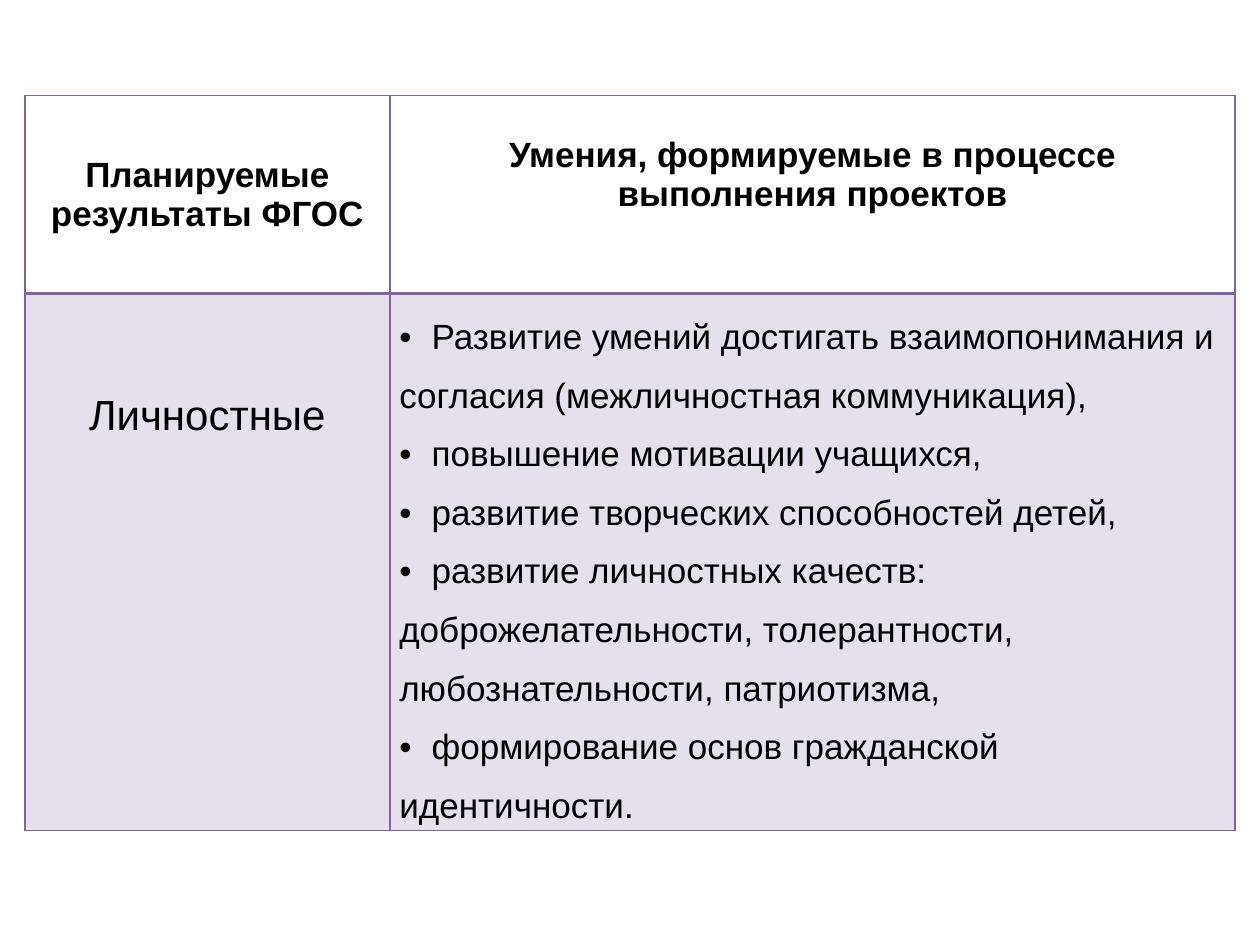
"""Build a slide with a table of planned results and project skills."""
from lxml import etree
from pptx import Presentation
from pptx.dml.color import RGBColor
from pptx.enum import text
from pptx.oxml import ns
from pptx.util import Cm, Pt

HUES = {"ink": "000000", "line": "8064A2", "tint": "E6E0EC"}
HEADS = ["Планируемые результаты ФГОС",
         "Умения, формируемые в процессе выполнения проектов"]
SKILLS = [
    "Развитие умений достигать взаимопонимания и согласия (межличностная коммуникация),",
    "повышение мотивации учащихся,",
    "развитие творческих способностей детей,",
    "развитие личностных качеств: доброжелательности, толерантности, любознательности, патриотизма,",
    "формирование основ гражданской идентичности.",
]
GAP = Cm(0.65)


def edge(cell, widths):
    props = cell._tc.get_or_add_tcPr()
    for spot, (side, width) in enumerate(zip("LRTB", widths)):
        line = etree.Element(ns.qn(f"a:ln{side}"), w=str(Pt(width)))
        fill = etree.SubElement(line, ns.qn("a:solidFill"))
        etree.SubElement(fill, ns.qn("a:srgbClr"), val=HUES["line"])
        props.insert(spot, line)


def style(par, size, bold=False):
    font = par.font
    for item in [font] + [run.font for run in par.runs]:
        item.name = "Arial"
        item.size = Pt(size)
        item.bold = bold
        item.color.rgb = RGBColor.from_string(HUES["ink"])


deck = Presentation()
deck.slide_width, deck.slide_height = Cm(25.4), Cm(19.05)
slide = deck.slides.add_slide(deck.slide_layouts[6])
grid = slide.shapes.add_table(2, 2, Cm(0.5), Cm(1.93), Cm(24.4), Cm(14.81)).table
grid.first_row = grid.horz_banding = False
for col, width in zip(grid.columns, (7.36, 17.04)):
    col.width = Cm(width)
for row, height in zip(grid.rows, (3.99, 10.82)):
    row.height = Cm(height)

for num, row in enumerate(grid.rows):
    for cell in row.cells:
        cell.margin_left = cell.margin_right = Cm(0.19)
        cell.margin_top = cell.margin_bottom = Cm(0.1)
        if num:
            cell.fill.solid()
            cell.fill.fore_color.rgb = RGBColor.from_string(HUES["tint"])
            edge(cell, (1, 1, 2, 1))
        else:
            cell.fill.background()
            edge(cell, (1, 1, 1, 2))

for cell, label in zip(grid.rows[0].cells, HEADS):
    cell.vertical_anchor = text.MSO_ANCHOR.MIDDLE
    cell.text_frame.text = label
    par = cell.text_frame.paragraphs[0]
    par.alignment = text.PP_ALIGN.CENTER
    style(par, 20, True)
grid.cell(0, 1).margin_bottom = Cm(0.89)

kind = grid.cell(1, 0)
kind.margin_top = Cm(2)
kind.text_frame.text = "Личностные"
par = kind.text_frame.paragraphs[0]
par.alignment = text.PP_ALIGN.CENTER
style(par, 24)

frame = grid.cell(1, 1).text_frame
frame.text = "\n".join("\t" + skill for skill in SKILLS)
for par in frame.paragraphs:
    par.line_spacing = 1.5
    props = par._p.get_or_add_pPr()
    props.set("marL", "0")
    props.set("indent", "0")
    etree.SubElement(props, ns.qn("a:buFont"), typeface="Arial")
    etree.SubElement(props, ns.qn("a:buChar"), char="•")
    tabs = etree.SubElement(props, ns.qn("a:tabLst"))
    etree.SubElement(tabs, ns.qn("a:tab"), pos=str(GAP), algn="l")
    style(par, 20)

deck.save("out.pptx")
